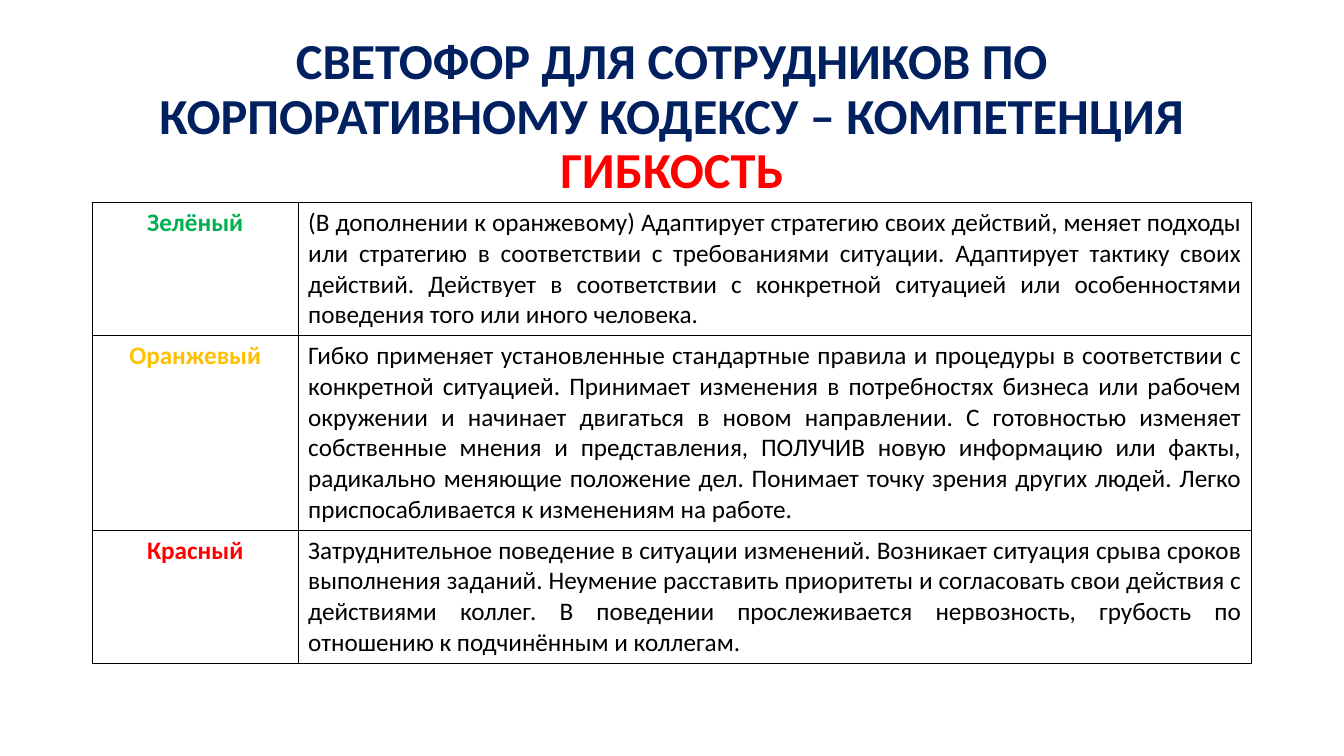
from pptx import Presentation
from pptx.dml.color import RGBColor
from pptx.enum import text
from pptx.oxml import parse_xml
from pptx.oxml.ns import nsdecls
from pptx.util import Pt

NAVY = RGBColor(0x00, 0x20, 0x60)
GREEN = RGBColor(0x00, 0xB0, 0x50)
AMBER = RGBColor(0xFF, 0xC0, 0x00)
RED = RGBColor(0xFF, 0x00, 0x00)
BLACK = RGBColor(0x00, 0x00, 0x00)

CENTER = text.PP_ALIGN.CENTER
JUSTIFY = text.PP_ALIGN.JUSTIFY

HEAD = "СВЕТОФОР ДЛЯ СОТРУДНИКОВ ПО КОРПОРАТИВНОМУ КОДЕКСУ – КОМПЕТЕНЦИЯ"
SKILL = "ГИБКОСТЬ"

# Level, its colour, row height, behaviour
LEVELS = [
    ("Зелёный", GREEN, 95,
     "(В дополнении к оранжевому) Адаптирует стратегию своих действий, "
     "меняет подходы или стратегию в соответствии с требованиями ситуации. "
     "Адаптирует тактику своих действий. Действует в соответствии с "
     "конкретной ситуацией или особенностями поведения того или иного "
     "человека."),
    ("Оранжевый", AMBER, 139,
     "Гибко применяет установленные стандартные правила и процедуры в "
     "соответствии с конкретной ситуацией. Принимает изменения в "
     "потребностях бизнеса или рабочем окружении и начинает двигаться в "
     "новом направлении. С готовностью изменяет собственные мнения и "
     "представления, ПОЛУЧИВ новую информацию или факты, радикально "
     "меняющие положение дел. Понимает точку зрения других людей. Легко "
     "приспосабливается к изменениям на работе."),
    ("Красный", RED, 95,
     "Затруднительное поведение в ситуации изменений. Возникает ситуация "
     "срыва сроков выполнения заданий. Неумение расставить приоритеты и "
     "согласовать свои действия с действиями коллег. В поведении "
     "прослеживается нервозность, грубость по отношению к подчинённым и "
     "коллегам."),
]


def add_run(para, words, size, color, bold):
    run = para.add_run()
    run.text = words
    run.font.color.rgb = color
    look = {"name": "Calibri", "size": Pt(size), "bold": bold}
    for key, val in look.items():
        setattr(run.font, key, val)


def add_title(slide, left, top, width, height):
    box = slide.shapes.add_textbox(Pt(left), Pt(top), Pt(width), Pt(height))
    look = {"word_wrap": True, "vertical_anchor": text.MSO_ANCHOR.MIDDLE}
    for key, val in look.items():
        setattr(box.text_frame, key, val)
    para = box.text_frame.paragraphs[0]
    para.alignment = CENTER
    para.line_spacing = 0.9
    add_run(para, HEAD, 36, NAVY, True)
    para.add_line_break()
    add_run(para, SKILL, 36, RED, True)


def add_frame(cell):
    props = cell._tc.get_or_add_tcPr()
    for side in ("lnL", "lnR", "lnT", "lnB"):
        props.append(parse_xml(
            f'<a:{side} {nsdecls("a")} w="{Pt(1)}"><a:solidFill>'
            f'<a:srgbClr val="{BLACK}"/></a:solidFill></a:{side}>'))
    cell.fill.background()


def add_levels(slide, left, top, width, height):
    grid = slide.shapes.add_table(
        len(LEVELS), 2, Pt(left), Pt(top), Pt(width), Pt(height)).table
    grid.first_row = grid.horz_banding = False
    label = 147
    for col, wide in zip(grid.columns, (label, width - label)):
        col.width = Pt(wide)
    for row, (name, color, tall, words) in zip(grid.rows, LEVELS):
        row.height = Pt(tall)
        parts = ((name, color, True, CENTER), (words, BLACK, False, JUSTIFY))
        for cell, (line, tint, bold, align) in zip(row.cells, parts):
            add_frame(cell)
            para = cell.text_frame.paragraphs[0]
            para.alignment = align
            add_run(para, line, 18, tint, bold)


def main():
    deck = Presentation()
    deck.slide_width, deck.slide_height = Pt(960), Pt(540)
    slide = deck.slides.add_slide(deck.slide_layouts[6])
    # Heading
    add_title(slide, 66, 18.7, 828, 131)
    # Traffic-light table
    add_levels(slide, 66, 144.7, 828, sum(lvl[2] for lvl in LEVELS))
    deck.save("out.pptx")


if __name__ == "__main__":
    main()
